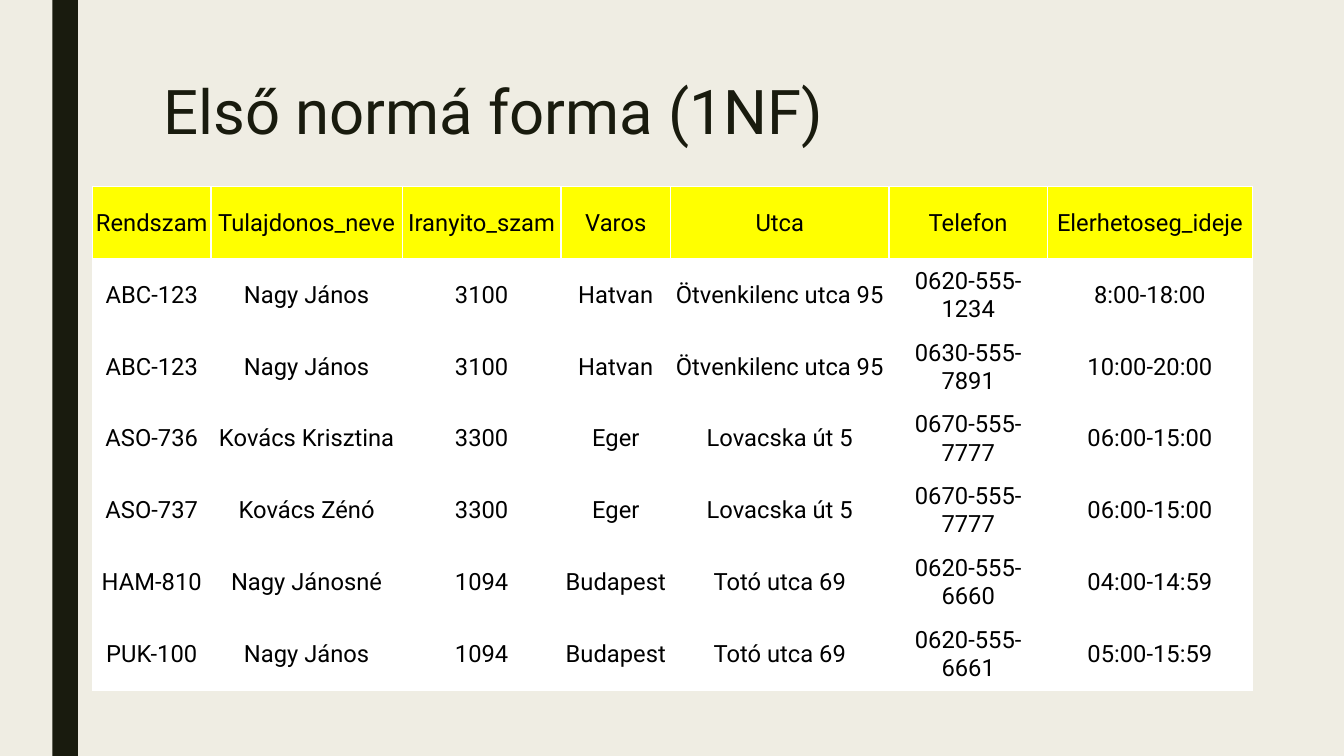
from dataclasses import dataclass

from lxml.etree import SubElement
from pptx import Presentation
from pptx.dml.color import RGBColor
from pptx.enum.shapes import MSO_SHAPE
from pptx.enum.text import MSO_ANCHOR, PP_ALIGN
from pptx.oxml.ns import qn
from pptx.util import Inches, Pt


@dataclass(frozen=True)
class Theme:
    font: str = "Roboto"
    background: str = "EFEDE3"
    dark: str = "191B0E"
    text: str = "000000"
    header: str = "FFFF00"
    body: str = "FFFFFF"
    border: str = "FFFFFF"
    title_size: float = 36.4
    cell_size: float = 14


THEME = Theme()
COLUMN_WIDTHS = [0.97, 1.57, 1.3, 0.9, 1.79, 1.3, 1.68]
ROW_HEIGHT = 0.59
ROWS = [
    ["Rendszam", "Tulajdonos_neve", "Iranyito_szam", "Varos", "Utca", "Telefon", "Elerhetoseg_ideje"],
    ["ABC-123", "Nagy János", "3100", "Hatvan", "Ötvenkilenc utca 95", "0620-555-1234", "8:00-18:00"],
    ["ABC-123", "Nagy János", "3100", "Hatvan", "Ötvenkilenc utca 95", "0630-555-7891", "10:00-20:00"],
    ["ASO-736", "Kovács Krisztina", "3300", "Eger", "Lovacska út 5", "0670-555-7777", "06:00-15:00"],
    ["ASO-737", "Kovács Zénó", "3300", "Eger", "Lovacska út 5", "0670-555-7777", "06:00-15:00"],
    ["HAM-810", "Nagy Jánosné", "1094", "Budapest", "Totó utca 69", "0620-555-6660", "04:00-14:59"],
    ["PUK-100", "Nagy János", "1094", "Budapest", "Totó utca 69", "0620-555-6661", "05:00-15:59"],
]


def set_fill(fill, color):
    fill.solid()
    fill.fore_color.rgb = RGBColor.from_string(color)


def style_run(r, size, color):
    r.font.name = THEME.font
    r.font.size = Pt(size)
    r.font.color.rgb = RGBColor.from_string(color)


def add_side_bar(s, height):
    bar = s.shapes.add_shape(MSO_SHAPE.RECTANGLE, Inches(0.43), 0, Inches(0.21), height)
    bar.shadow.inherit = False
    set_fill(bar.fill, THEME.dark)
    bar.line.fill.background()


def add_title(s, text):
    sp = s.shapes.add_textbox(Inches(1.24), Inches(0.62), Inches(8.68), Inches(1.34))
    tf = sp.text_frame
    tf.word_wrap = True
    tf.text = text
    p = tf.paragraphs[0]
    p.line_spacing = 0.89
    style_run(p.runs[0], THEME.title_size, THEME.dark)


def add_borders(cell):
    props = cell._tc.get_or_add_tcPr()
    for i, side in enumerate(("lnL", "lnR", "lnT", "lnB")):
        line = props.makeelement(qn(f"a:{side}"), {"w": str(Pt(1))})
        SubElement(SubElement(line, qn("a:solidFill")), qn("a:srgbClr"), val=THEME.border)
        props.insert(i, line)


def fill_cell(cell, text, color):
    cell.text_frame.text = text
    cell.vertical_anchor = MSO_ANCHOR.MIDDLE
    cell.margin_left = cell.margin_right = cell.margin_top = Inches(0.01)
    cell.margin_bottom = 0
    p = cell.text_frame.paragraphs[0]
    p.alignment = PP_ALIGN.CENTER
    style_run(p.runs[0], THEME.cell_size, THEME.text)
    set_fill(cell.fill, color)
    add_borders(cell)


def add_data_table(s):
    table = s.shapes.add_table(
        len(ROWS), len(COLUMN_WIDTHS), Inches(0.76), Inches(1.53),
        Inches(sum(COLUMN_WIDTHS)), Inches(ROW_HEIGHT * len(ROWS)),
    ).table
    table.horz_banding = False
    table.first_row = False
    for column, width in zip(table.columns, COLUMN_WIDTHS):
        column.width = Inches(width)
    for i, values in enumerate(ROWS):
        table.rows[i].height = Inches(ROW_HEIGHT)
        color = THEME.body if i else THEME.header
        for j, value in enumerate(values):
            fill_cell(table.cell(i, j), value, color)


def main():
    prs = Presentation()
    prs.slide_width = Inches(11.02)
    prs.slide_height = Inches(6.2)
    s = prs.slides.add_slide(prs.slide_layouts[6])
    set_fill(s.background.fill, THEME.background)
    add_side_bar(s, prs.slide_height)
    add_title(s, "Első normá forma (1NF)")
    add_data_table(s)
    prs.save("out.pptx")


if __name__ == "__main__":
    main()
